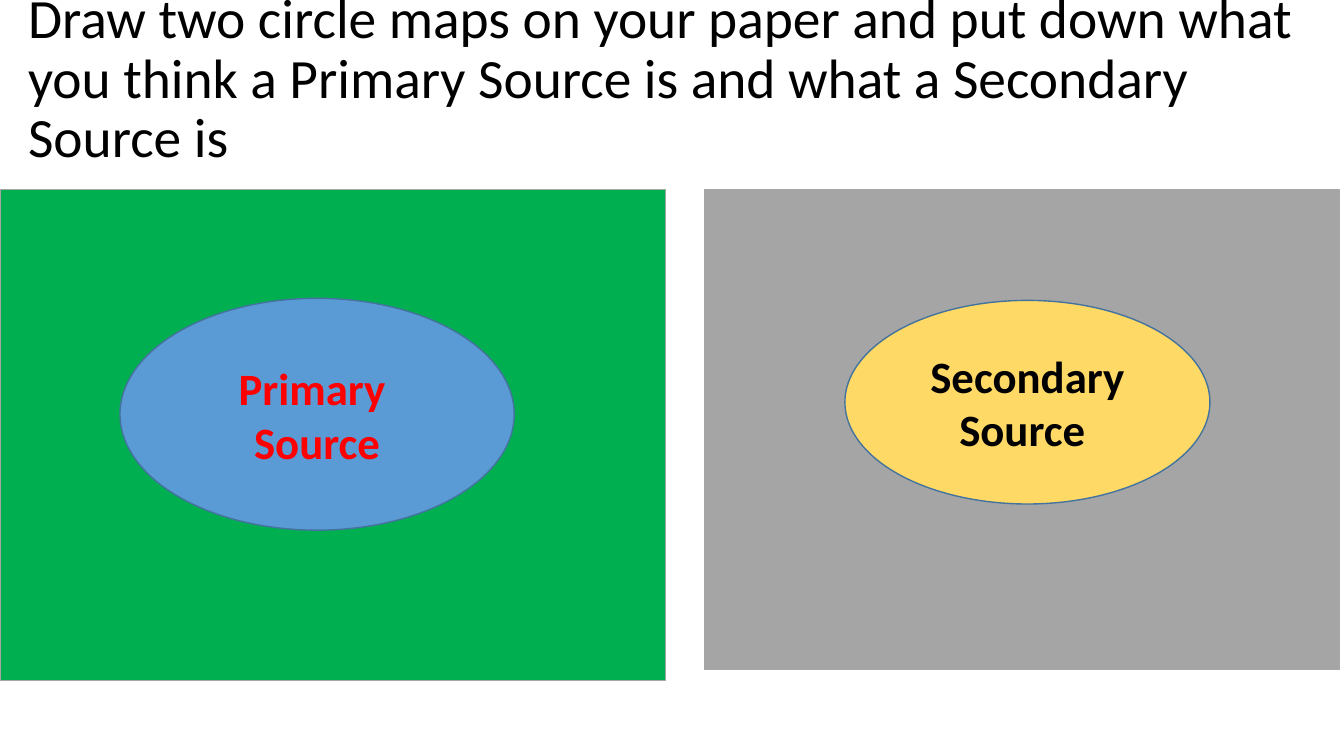
from pptx import Presentation
from pptx.dml.color import RGBColor
from pptx.enum.shapes import MSO_SHAPE
from pptx.enum.text import MSO_ANCHOR, PP_ALIGN
from pptx.util import Inches, Pt

RECT, OVAL = MSO_SHAPE.RECTANGLE, MSO_SHAPE.OVAL
MIDDLE = MSO_ANCHOR.MIDDLE
LEFT, CENTER = PP_ALIGN.LEFT, PP_ALIGN.CENTER

COLORS = {
    "black": "000000", "red": "FF0000", "green": "00B050", "blue": "5B9BD5",
    "gray": "A5A5A5", "gold": "FFD966", "edge": "A6A6A6", "rim": "43739E",
}


def color(name):
    return RGBColor.from_string(COLORS[name])


class Board:
    """Holds the text style and the current slide."""

    def __init__(self, slide, font):
        self.slide = slide
        self.font = font

    def label(self, shape, lines, size, ink, bold=False, align=LEFT, pitch=1.0):
        frame = shape.text_frame
        frame.word_wrap = True
        frame.vertical_anchor = MIDDLE
        frame.text = "\n".join(lines)
        style = {"name": self.font, "size": Pt(size), "bold": bold}
        for para in frame.paragraphs:
            para.alignment = align
            para.line_spacing = pitch
            for key, value in style.items():
                setattr(para.runs[0].font, key, value)
            para.runs[0].font.color.rgb = color(ink)

    def title(self, box, text):
        shape = self.slide.shapes.add_textbox(*map(Inches, box))
        self.label(shape, [text], 39.6, "black", pitch=0.9)

    def shape(self, kind, box, fill, line):
        shape = self.slide.shapes.add_shape(kind, *map(Inches, box))
        shape.shadow.inherit = False
        shape.fill.solid()
        shape.fill.fore_color.rgb = color(fill)
        shape.line.color.rgb = color(line)
        shape.line.width = Pt(1)
        return shape

    def panel(self, box, fill):
        self.shape(RECT, box, fill, "edge")

    def circle(self, box, fill, lines, ink):
        shape = self.shape(OVAL, box, fill, "rim")
        self.label(shape, lines, 32, ink, bold=True, align=CENTER)


def main():
    deck = Presentation()
    deck.slide_width, deck.slide_height = Inches(13.33), Inches(7.5)
    board = Board(deck.slides.add_slide(deck.slide_layouts[6]), "Calibri")

    # Task
    board.title((0.18, 0, 12.84, 1.59),
                "Draw two circle maps on your paper and put down what you think "
                "a Primary Source is and what a Secondary Source is")

    # Primary source map
    board.panel((0, 1.88, 6.6, 4.87), "green")
    board.circle((1.19, 2.96, 3.91, 2.3), "blue", ["Primary ", "Source"], "red")

    # Secondary source map
    board.panel((6.99, 1.88, 6.29, 4.76), "gray")
    board.circle((8.38, 2.98, 3.62, 2.02), "gold", ["Secondary Source "], "black")

    deck.save("out.pptx")


if __name__ == "__main__":
    main()
